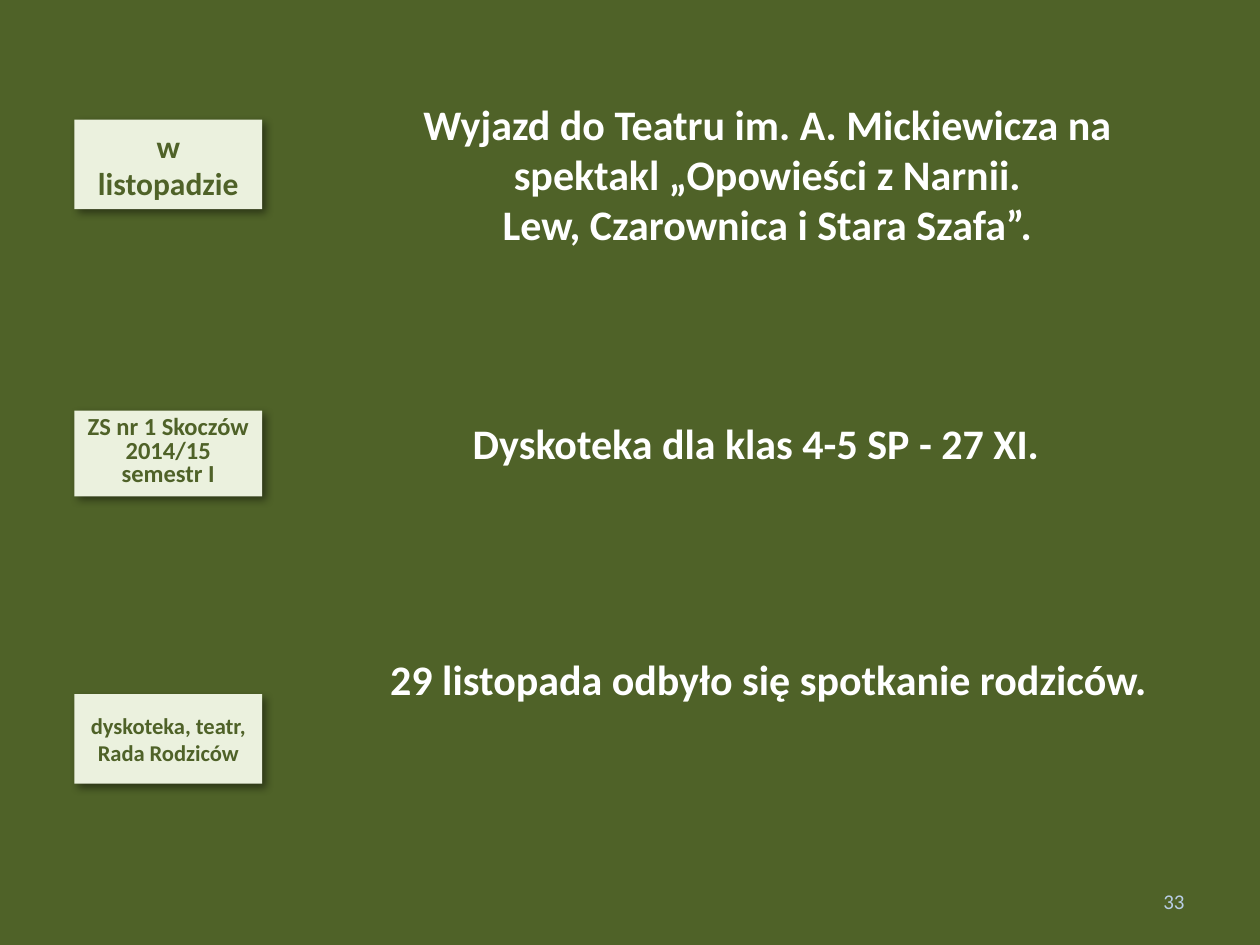
from pptx import Presentation
from pptx.dml.color import RGBColor
from pptx.enum.shapes import MSO_SHAPE
from pptx.enum.text import MSO_ANCHOR as ANCHOR, PP_ALIGN as ALIGN
from pptx.oxml import parse_xml
from pptx.oxml.ns import nsdecls
from pptx.util import Inches, Pt

COLORS = {
    "background": "4F6228",
    "card": "EBF1DE",
    "label": "4F6228",
    "event": "FFFFFF",
    "number": "B9CDE5",
    "shadow": "000000",
}
SHADOW = (
    f'<a:outerShdw {nsdecls("a")} blurRad="{Pt(5)}" dist="{Pt(3)}" '
    f'dir="{45 * 60000}" algn="tl" rotWithShape="0">'
    f'<a:srgbClr val="{COLORS["shadow"]}"><a:alpha val="43000"/></a:srgbClr>'
    "</a:outerShdw>"
)

prs = Presentation()
prs.slide_width, prs.slide_height = Inches(10), Inches(7.5)
slide = prs.slides.add_slide(prs.slide_layouts[6])
slide.background.fill.solid()
slide.background.fill.fore_color.rgb = RGBColor.from_string(COLORS["background"])


def place(left, top, width, height):
    """Turn percentages of the slide into lengths."""
    return (
        int(prs.slide_width * left / 100),
        int(prs.slide_height * top / 100),
        int(prs.slide_width * width / 100),
        int(prs.slide_height * height / 100),
    )


def write(box, lines, size, color, bold=True, align=ALIGN.CENTER,
          anchor=ANCHOR.TOP, spacing=None):
    frame = box.text_frame
    frame.word_wrap = True
    frame.vertical_anchor = anchor
    frame.text = "\n".join(lines)
    for paragraph in frame.paragraphs:
        paragraph.alignment = align
        paragraph.line_spacing = spacing
        font = paragraph.font
        font.name, font.size, font.bold = "Calibri", Pt(size), bold
        font.color.rgb = RGBColor.from_string(COLORS[color])


# Left column: label cards (top, height, lines, size, anchor, line spacing)
labels = [
    (12.67, 9.47, ["w", "listopadzie"], 18, ANCHOR.MIDDLE, None),
    (43.47, 9.07, ["ZS nr 1 Skoczów 2014/15", "semestr I"], 14, ANCHOR.TOP, 0.8),
    (73.47, 9.47, ["dyskoteka, teatr, Rada Rodziców"], 12.9, ANCHOR.MIDDLE, None),
]
for top, height, lines, size, anchor, spacing in labels:
    card = slide.shapes.add_shape(MSO_SHAPE.RECTANGLE, *place(5.9, top, 14.9, height))
    card.fill.solid()
    card.fill.fore_color.rgb = RGBColor.from_string(COLORS["card"])
    card.line.fill.background()
    card.shadow.inherit = False
    card.element.spPr.find("{*}effectLst").append(parse_xml(SHADOW))
    write(card, lines, size, "label", anchor=anchor, spacing=spacing)

# Right column: events (left, top, width, height, lines)
events = [
    (27.9, 9.73, 66, 17.47, ["Wyjazd do Teatru im. A. Mickiewicza na spektakl „Opowieści z Narnii.",
                             "Lew, Czarownica i Stara Szafa”."]),
    (25, 43.47, 70, 6.8, ["Dyskoteka dla klas 4-5 SP - 27 XI."]),
    (29.5, 68.53, 63, 6.67, ["29 listopada odbyło się spotkanie rodziców."]),
]
for *area, lines in events:
    write(slide.shapes.add_textbox(*place(*area)), lines, 24, "event")

# Slide number
number = slide.shapes.add_textbox(*place(71.7, 92.67, 23.3, 5.33))
write(number, ["33"], 12, "number", bold=False, align=ALIGN.RIGHT, anchor=ANCHOR.MIDDLE)

prs.save("out.pptx")
